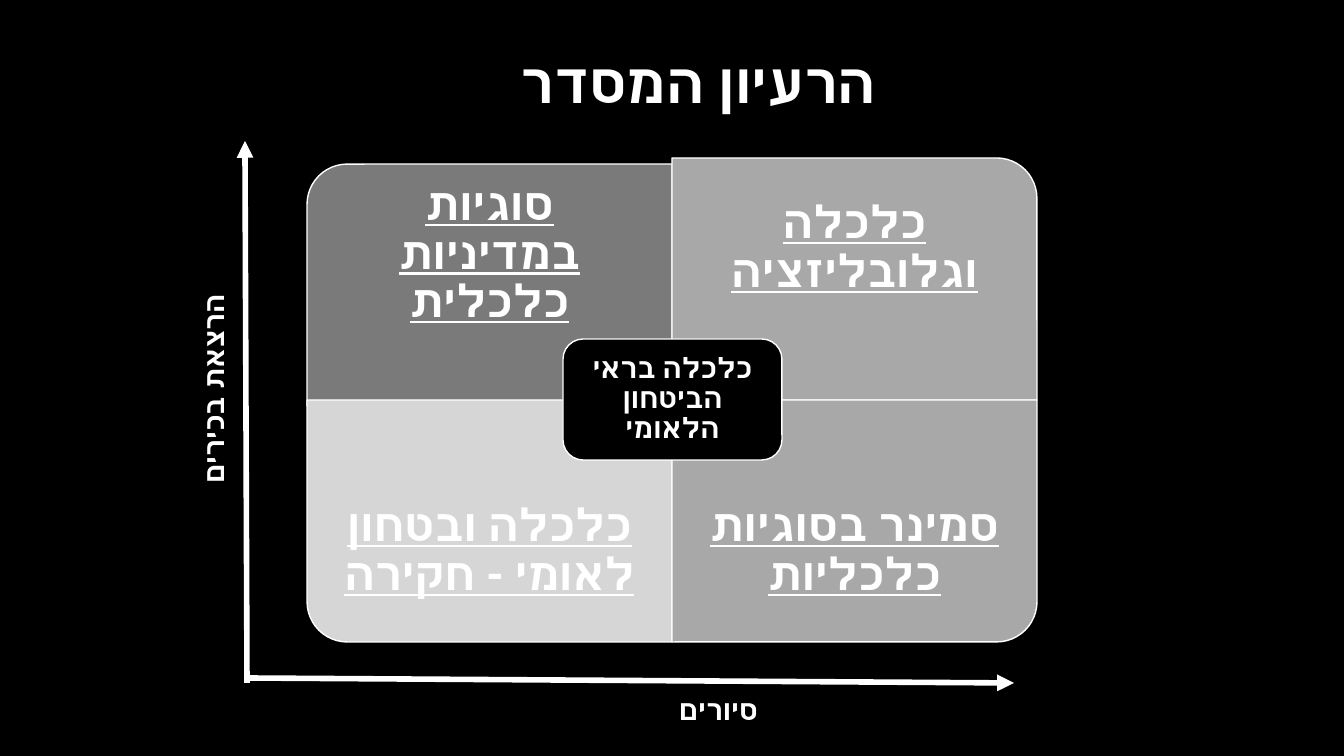
import pptx
import pptx.util
import pptx.dml.color
import pptx.enum.shapes
import pptx.enum.text
import pptx.oxml
import pptx.oxml.ns
from dataclasses import dataclass
from lxml import etree


@dataclass(frozen=True)
class Theme:
    font: str = "Roboto"
    back: str = "000000"
    ink: str = "FFFFFF"
    dark: str = "7A7A7A"
    mid: str = "A8A8A8"
    pale: str = "D6D6D6"
    title: int = 40
    topic: int = 32
    label: int = 20
    edge: int = 1
    axis: int = 4


LOOK = Theme()
PAGE = (1344, 756)

TOPICS = [
    ("סוגיות במדיניות כלכלית", 0, 0, 164, 270, LOOK.dark),
    ("כלכלה וגלובליזציה", 1, 0, 158, 0, LOOK.mid),
    ("כלכלה ובטחון לאומי - חקירה", 0, 1, 400, 180, LOOK.pale),
    ("סמינר בסוגיות כלכליות", 1, 1, 400, 90, LOOK.mid),
]
LEFT, WIDE, HIGH, BODY = 307, 365, 242, 181
CORE = ("כלכלה בראי הביטחון הלאומי", (563, 339, 219, 121))
AXES = [(247, 678, 1014, 683), (247, 683, 245, 141)]
LABELS = [
    ("הרעיון המסדר", (460, 49, 426, 72), 0, LOOK.title),
    ("סיורים", (656, 691, 112, 40), 0, LOOK.label),
    ("הרצאת בכירים", (100, 379, 230, 40), 270, LOOK.label),
]

SCALE = 914400 / 100.8
KIND = pptx.enum.shapes.MSO_SHAPE
ALIGN = pptx.enum.text.PP_ALIGN
FIT = pptx.enum.text.MSO_AUTO_SIZE


def px(*vals):
    return [pptx.util.Emu(round(v * SCALE)) for v in vals]


def rgb(code):
    return pptx.dml.color.RGBColor.from_string(code)


def write(shape, text, size, align, pad=(10, 5), wrap=True, line=False):
    frame = shape.text_frame
    frame.word_wrap = wrap
    frame.auto_size = FIT.NONE if wrap else FIT.SHAPE_TO_FIT_TEXT
    frame.vertical_anchor = pptx.enum.text.MSO_ANCHOR.MIDDLE
    side, top = px(*pad)
    frame.margin_left = frame.margin_right = side
    frame.margin_top = frame.margin_bottom = top
    para = frame.paragraphs[0]
    para.alignment = align
    para.line_spacing = 0.9
    props = para._p.get_or_add_pPr()
    props.set("rtl", "1")
    if wrap:
        after = etree.SubElement(props, pptx.oxml.ns.qn("a:spcAft"))
        etree.SubElement(after, pptx.oxml.ns.qn("a:spcPct"), val="35000")
    run = para.add_run()
    run.text = text
    font = run.font
    font.size = pptx.util.Pt(size)
    font.bold = True
    if line:
        font.underline = True
    font.color.rgb = rgb(LOOK.ink)
    font.name = LOOK.font
    etree.SubElement(
        run._r.get_or_add_rPr(), pptx.oxml.ns.qn("a:cs"), typeface=LOOK.font
    )


def block(slide, kind, box, fill):
    shape = slide.shapes.add_shape(kind, *px(*box))
    shape.shadow.inherit = False
    shape.fill.solid()
    shape.fill.fore_color.rgb = rgb(fill)
    shape.line.color.rgb = rgb(LOOK.ink)
    shape.line.width = pptx.util.Pt(LOOK.edge)
    return shape


def topic(slide, text, col, row, top, turn, fill):
    left = LEFT + col * WIDE
    wide, high = (HIGH, WIDE) if turn % 180 else (WIDE, HIGH)
    box = (left + (WIDE - wide) / 2, top + (HIGH - high) / 2, wide, high)
    block(slide, KIND.ROUND_1_RECTANGLE, box, fill).rotation = turn
    inner = (left, top + row * (HIGH - BODY), WIDE, BODY)
    area = slide.shapes.add_textbox(*px(*inner))
    write(area, text, LOOK.topic, ALIGN.CENTER, (25, 25), line=True)


def axis(slide, ends):
    link = slide.shapes.add_connector(
        pptx.enum.shapes.MSO_CONNECTOR.STRAIGHT, *px(*ends)
    )
    link.line.color.rgb = rgb(LOOK.ink)
    link.line.width = pptx.util.Pt(LOOK.axis)
    etree.SubElement(
        link.line._get_or_add_ln(), pptx.oxml.ns.qn("a:tailEnd"), type="triangle"
    )
    etree.SubElement(link._element.spPr, pptx.oxml.ns.qn("a:effectLst"))


def label(slide, text, box, turn, size):
    area = slide.shapes.add_textbox(*px(*box))
    area.rotation = turn
    write(area, text, size, ALIGN.RIGHT, wrap=False)


def main():
    deck = pptx.Presentation()
    deck.slide_width, deck.slide_height = px(*PAGE)
    slide = deck.slides.add_slide(deck.slide_layouts[6])
    slide.background.fill.solid()
    slide.background.fill.fore_color.rgb = rgb(LOOK.back)
    for item in TOPICS:
        topic(slide, *item)
    text, box = CORE
    core = block(slide, KIND.ROUNDED_RECTANGLE, box, LOOK.back)
    write(core, text, LOOK.label, ALIGN.CENTER, (14, 14))
    for ends in AXES:
        axis(slide, ends)
    for item in LABELS:
        label(slide, *item)
    deck.save("out.pptx")


if __name__ == "__main__":
    main()
